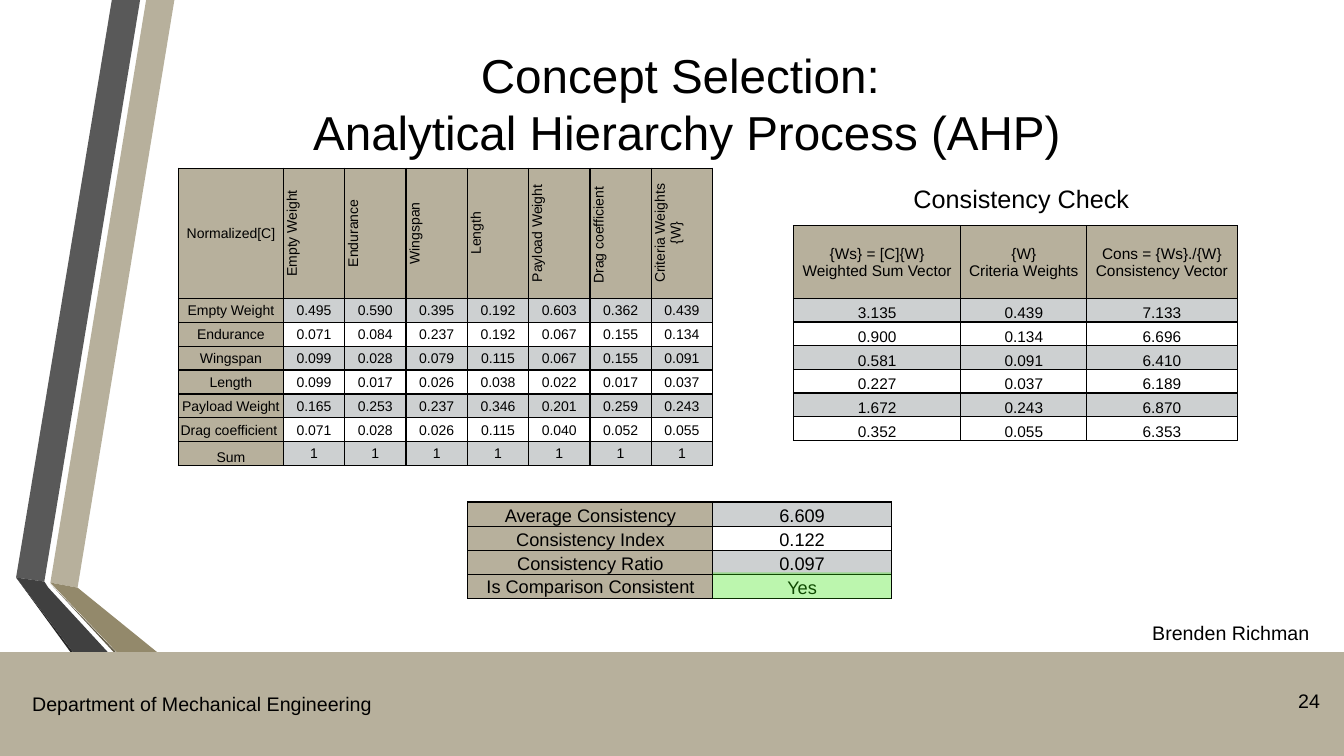
from dataclasses import dataclass

from lxml.etree import SubElement
from pptx import Presentation
from pptx.dml.color import RGBColor
from pptx.enum.shapes import MSO_SHAPE
from pptx.enum.text import MSO_ANCHOR, PP_ALIGN
from pptx.oxml import parse_xml
from pptx.oxml.ns import nsdecls, qn
from pptx.util import Inches, Pt


@dataclass(frozen=True)
class Theme:
    font: str = "Arial"
    ink: str = "000000"
    tan: str = "B7B09C"
    band: str = "CDD0D1"
    plain: str = "FFFFFF"
    green: str = "2FE604"
    gray: str = "595959"
    dark: str = "404040"
    edge: str = "262626"
    olive: str = "93896B"
    brown: str = "625B47"
    title: int = 34
    head: int = 18
    note: int = 14
    result: int = 13
    check: int = 11
    norm: int = 10


THEME = Theme()

CRITERIA = ["Empty Weight", "Endurance", "Wingspan", "Length",
            "Payload Weight", "Drag coefficient "]
SCORES = [
    ["0.495", "0.590", "0.395", "0.192", "0.603", "0.362"],
    ["0.071", "0.084", "0.237", "0.192", "0.067", "0.155"],
    ["0.099", "0.028", "0.079", "0.115", "0.067", "0.155"],
    ["0.099", "0.017", "0.026", "0.038", "0.022", "0.017"],
    ["0.165", "0.253", "0.237", "0.346", "0.201", "0.259"],
    ["0.071", "0.028", "0.026", "0.115", "0.040", "0.052"],
]
WEIGHTS = ["0.439", "0.134", "0.091", "0.037", "0.243", "0.055"]
SUMS = ["3.135", "0.900", "0.581", "0.227", "1.672", "0.352"]
RATIOS = ["7.133", "6.696", "6.410", "6.189", "6.870", "6.353"]
RESULTS = [("Average Consistency", "6.609"), ("Consistency Index", "0.122"),
           ("Consistency Ratio", "0.097"), ("Is Comparison Consistent", "Yes")]


def style(frame, size, align):
    for para in frame.paragraphs:
        para.alignment = align
        for run in para.runs:
            run.font.name = THEME.font
            run.font.size = Pt(size)
            run.font.color.rgb = RGBColor.from_string(THEME.ink)


def label(slide, box, text, size, align=PP_ALIGN.LEFT,
          anchor=MSO_ANCHOR.TOP, wrap=True):
    frame = slide.shapes.add_textbox(*map(Inches, box)).text_frame
    frame.word_wrap = wrap
    frame.vertical_anchor = anchor
    frame.text = text
    style(frame, size, align)
    return frame


def paint(shape, color):
    shape.shadow.inherit = False
    shape.line.fill.background()
    shape.fill.solid()
    shape.fill.fore_color.rgb = RGBColor.from_string(color)


def block(slide, box, color):
    shape = slide.shapes.add_shape(MSO_SHAPE.RECTANGLE, *map(Inches, box))
    paint(shape, color)
    return shape


def ribbons(slide, box):
    """Folded ribbons; points are measured from the box corner."""
    left, top = box
    folds = [
        (THEME.tan, [(0.34, 5.78), (0.61, 5.83), (1.57, 0), (1.29, 0)]),
        (THEME.gray, [(1.23, 0), (0.95, 0), (0, 5.73), (0.28, 5.77)]),
        (THEME.edge, [(0, 5.73), (1.29, 7.5), (1.35, 7.5)]),
        (THEME.brown, [(0.34, 5.79), (1.92, 7.5), (1.98, 7.5)]),
        (THEME.olive, [(0.34, 5.78), (1.98, 7.5), (2.67, 7.5), (0.61, 5.83)]),
        (THEME.dark, [(1.86, 7.5), (0.32, 5.83), (0.28, 5.77), (0, 5.73),
                      (1.35, 7.5)]),
    ]
    for color, points in folds:
        spots = [(Inches(left + x), Inches(top + y)) for x, y in points]
        path = slide.shapes.build_freeform(*spots[0], scale=1.0)
        path.add_line_segments(spots[1:], close=True)
        paint(path.convert_to_shape(), color)


def footer(slide, box):
    left, top, width, _ = box
    block(slide, box, THEME.tan)
    label(slide, (left + 0.22, top + 0.35, 3.59, 0.34),
          "Department of Mechanical Engineering", THEME.note, wrap=False)
    label(slide, (left + width - 0.91, top + 0.32, 0.77, 0.4), "24",
          THEME.note, PP_ALIGN.RIGHT)
    author = label(slide, (left + width - 2, top - 0.33, 2, 0.34),
                   "Brenden Richman", THEME.note)
    author.paragraphs[0].line_spacing = 0.9


def border(cell):
    props = cell._tc.get_or_add_tcPr()
    for spot, side in enumerate(("lnL", "lnR", "lnT", "lnB")):
        props.insert(spot, parse_xml(
            f'<a:{side} {nsdecls("a")} w="12700"><a:solidFill>'
            f'<a:srgbClr val="{THEME.ink}"/></a:solidFill></a:{side}>'))


def grid(slide, box, rows, cols, heights, size, anchor, heads):
    """Table with banded rows; heads tells which cells are headings."""
    table = slide.shapes.add_table(len(rows), len(cols),
                                   *map(Inches, box)).table
    table.first_row = table.horz_banding = False
    for col, width in zip(table.columns, cols):
        col.width = Inches(width)
    for row, height in zip(table.rows, heights):
        row.height = Inches(height)
    first = 1 if heads(0, len(cols) - 1) else 0
    for r, row in enumerate(rows):
        for c, text in enumerate(row):
            cell = table.cell(r, c)
            cell.text_frame.text = text
            style(cell.text_frame, size, PP_ALIGN.CENTER)
            cell.margin_left = cell.margin_right = Inches(0.01)
            cell.margin_top, cell.margin_bottom = Inches(0.01), 0
            cell.vertical_anchor = anchor
            shade = THEME.plain if (r - first) % 2 else THEME.band
            cell.fill.solid()
            cell.fill.fore_color.rgb = RGBColor.from_string(
                THEME.tan if heads(r, c) else shade)
            border(cell)
    return table


def normal(slide, box):
    """Normalized matrix with upright column headings."""
    _, _, width, height = box
    count = len(CRITERIA) + 1
    rows = [["Normalized[C]", *CRITERIA, "Criteria Weights\v{W}"]]
    rows += [[name, *row, weight]
             for name, row, weight in zip(CRITERIA, SCORES, WEIGHTS)]
    rows.append(["Sum"] + ["1"] * count)
    name, head = 1.04, 1.29
    table = grid(slide, box, rows, [name] + [(width - name) / count] * count,
                 [head] + [(height - head) / count] * count, THEME.norm,
                 MSO_ANCHOR.MIDDLE, lambda r, c: r == 0 or c == 0)
    for c in range(1, count + 1):
        table.cell(0, c)._tc.get_or_add_tcPr().set("vert", "vert270")
    table.cell(count, 0).vertical_anchor = MSO_ANCHOR.BOTTOM


def check(slide, box):
    """Consistency vectors under their heading."""
    left, top, _, height = box
    label(slide, (left + 0.89, top - 0.47, 2.74, 0.4), "Consistency Check",
          THEME.head, PP_ALIGN.CENTER)
    rows = [("{Ws} = [C]{W}\vWeighted Sum Vector", "{W}\vCriteria Weights",
             "Cons = {Ws}./{W}\vConsistency Vector")]
    rows += zip(SUMS, WEIGHTS, RATIOS)
    head, count = 0.72, len(SUMS)
    table = grid(slide, box, rows, [1.66, 1.25, 1.49],
                 [head] + [(height - head) / count] * count, THEME.check,
                 MSO_ANCHOR.BOTTOM, lambda r, c: r == 0)
    for c in range(3):
        table.cell(0, c).vertical_anchor = MSO_ANCHOR.MIDDLE


def verdict(slide, box):
    """Summary results, with a green tint over the last answer."""
    left, top, width, height = box
    name, count = 2.43, len(RESULTS)
    step = height / count
    table = grid(slide, box, RESULTS, [name, width - name], [step] * count,
                 THEME.result, MSO_ANCHOR.BOTTOM, lambda r, c: c == 0)
    table.cell(count - 1, 0).vertical_anchor = MSO_ANCHOR.MIDDLE
    tint = block(slide, (left + name, top + height - 0.26, width - name, 0.26),
                 THEME.green)
    color = tint.element.spPr.find(".//" + qn("a:srgbClr"))
    SubElement(color, qn("a:alpha")).set("val", "32000")


def main():
    deck = Presentation()
    deck.slide_width, deck.slide_height = Inches(13.33), Inches(7.5)
    slide = deck.slides.add_slide(deck.slide_layouts[6])
    ribbons(slide, (0.16, 0))
    footer(slide, (0, 6.47, 13.33, 1.03))
    label(slide, (0.45, 0.27, 12.73, 1.5),
          "Concept Selection: \vAnalytical Hierarchy Process (AHP)",
          THEME.title, PP_ALIGN.CENTER, MSO_ANCHOR.MIDDLE)
    normal(slide, (1.77, 1.67, 5.3, 2.95))
    check(slide, (7.87, 2.24, 4.4, 2.13))
    verdict(slide, (4.64, 4.98, 4.2, 0.96))
    deck.save("out.pptx")


if __name__ == "__main__":
    main()
